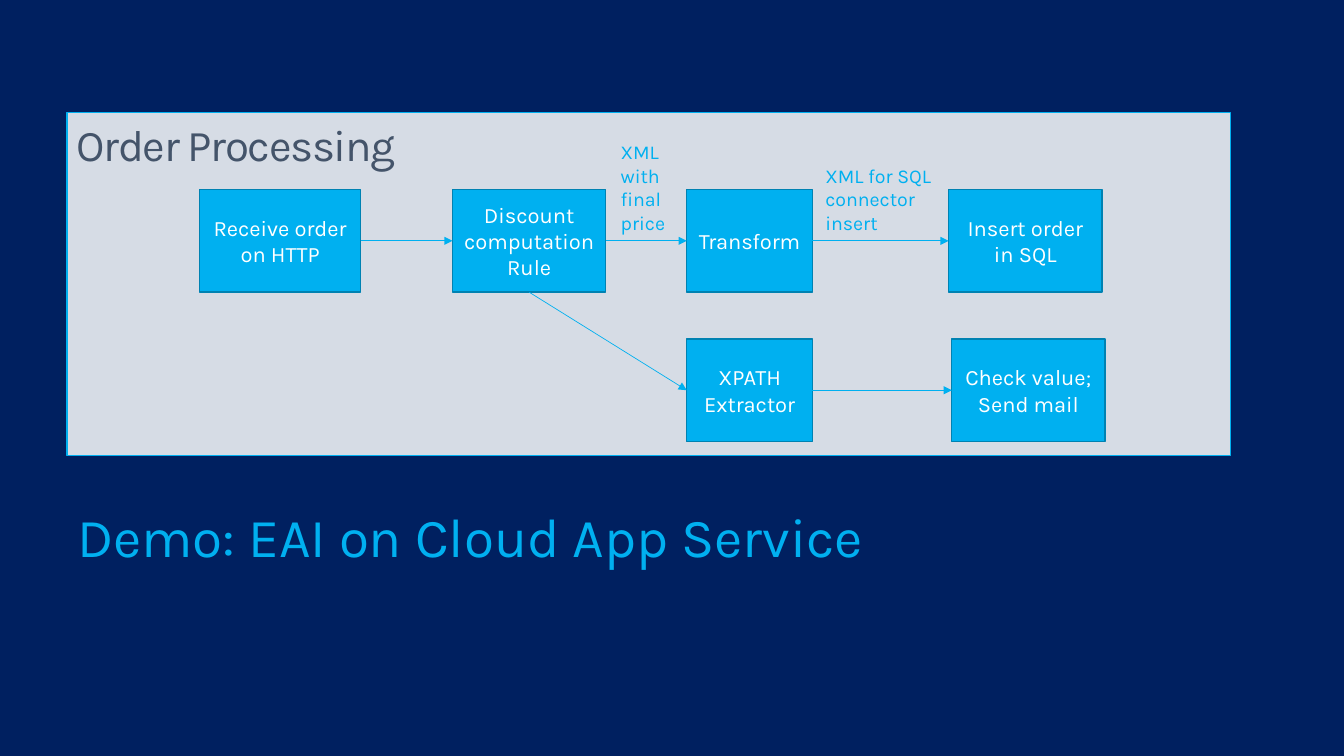
from lxml.etree import SubElement
from pptx import Presentation
from pptx.dml.color import RGBColor
from pptx.enum.shapes import MSO_CONNECTOR, MSO_SHAPE
from pptx.enum.text import MSO_ANCHOR, PP_ALIGN
from pptx.oxml.ns import qn
from pptx.util import Cm, Pt

COLORS = {
    "navy": "002060",
    "panel": "D6DCE5",
    "sky": "00B0F0",
    "edge": "0082B2",
    "slate": "44546A",
    "white": "FFFFFF",
}
FONT = "Karla"
LEFT, RIGHT, BOTTOM = 1, 3, 2


def rgb(name):
    return RGBColor.from_string(COLORS[name])


def write(shape, text, size=16, color="white", align=PP_ALIGN.LEFT,
          anchor=MSO_ANCHOR.TOP, tracking=None):
    frame = shape.text_frame
    frame.word_wrap = True
    frame.vertical_anchor = anchor
    paragraph = frame.paragraphs[0]
    paragraph.alignment = align
    run = paragraph.add_run()
    run.text = text
    run.font.name = FONT
    run.font.size = Pt(size)
    run.font.color.rgb = rgb(color)
    if tracking:
        run._r.get_or_add_rPr().set("spc", str(tracking))


class FlowSlide:
    """Draws the parts of a process flow on one slide in a shared style."""

    def __init__(self, slide):
        self.slide = slide
        slide.background.fill.solid()
        slide.background.fill.fore_color.rgb = rgb("navy")

    def rectangle(self, left, top, width, height, fill, line):
        shape = self.slide.shapes.add_shape(
            MSO_SHAPE.RECTANGLE, Cm(left), Cm(top), Cm(width), Cm(height))
        shape.shadow.inherit = False
        shape.fill.solid()
        shape.fill.fore_color.rgb = rgb(fill)
        shape.line.color.rgb = rgb(line)
        shape.line.width = Pt(1)
        return shape

    def panel(self, text, left, top, width, height):
        shape = self.rectangle(left, top, width, height, "panel", "sky")
        write(shape, text, size=32, color="slate", tracking=-100)

    def step(self, text, left, top, width, height=2.64):
        shape = self.rectangle(left, top, width, height, "sky", "edge")
        write(shape, text, align=PP_ALIGN.CENTER, anchor=MSO_ANCHOR.MIDDLE)
        return shape

    def label(self, text, left, bottom, width, height, size=14.3):
        box = self.slide.shapes.add_textbox(
            Cm(left), Cm(bottom - height), Cm(width), Cm(height))
        write(box, text, size=size, color="sky", anchor=MSO_ANCHOR.BOTTOM)

    def arrow(self, source, target, side=RIGHT):
        connector = self.slide.shapes.add_connector(
            MSO_CONNECTOR.STRAIGHT, 0, 0, 0, 0)
        connector.begin_connect(source, side)
        connector.end_connect(target, LEFT)
        connector.line.color.rgb = rgb("sky")
        connector.line.width = Pt(0.5)
        SubElement(connector.line._get_or_add_ln(), qn("a:tailEnd"), type="triangle")
        SubElement(connector._element.spPr, qn("a:effectLst"))


def main():
    deck = Presentation()
    deck.slide_width, deck.slide_height = Cm(34.54), Cm(19.43)
    flow = FlowSlide(deck.slides.add_slide(deck.slide_layouts[6]))

    flow.label("Demo: EAI on Cloud App Service", 1.73, 14.73, 31.27, 6.76, size=40)
    flow.panel("Order Processing", 1.72, 2.9, 29.9, 8.81)

    main_row, mail_row = 4.87, 8.71
    receive = flow.step("Receive order on HTTP", 5.13, main_row, 4.14)
    discount = flow.step("Discount computation Rule", 11.63, main_row, 3.94)
    transform = flow.step("Transform", 17.65, main_row, 3.23)
    insert = flow.step("Insert order in SQL", 24.38, main_row, 3.94)
    extractor = flow.step("XPATH Extractor", 17.65, mail_row, 3.23)
    mail = flow.step("Check value; Send mail", 24.46, mail_row, 3.94)

    above_arrow = 6.15
    flow.label("XML with final price", 15.7, above_arrow, 2.34, 2.74)
    flow.label("XML for SQL connector insert", 20.96, above_arrow, 3.58, 2.13)

    for source, target in [(receive, discount), (discount, transform),
                           (transform, insert), (extractor, mail)]:
        flow.arrow(source, target)
    flow.arrow(discount, extractor, side=BOTTOM)

    deck.save("out.pptx")


if __name__ == "__main__":
    main()
